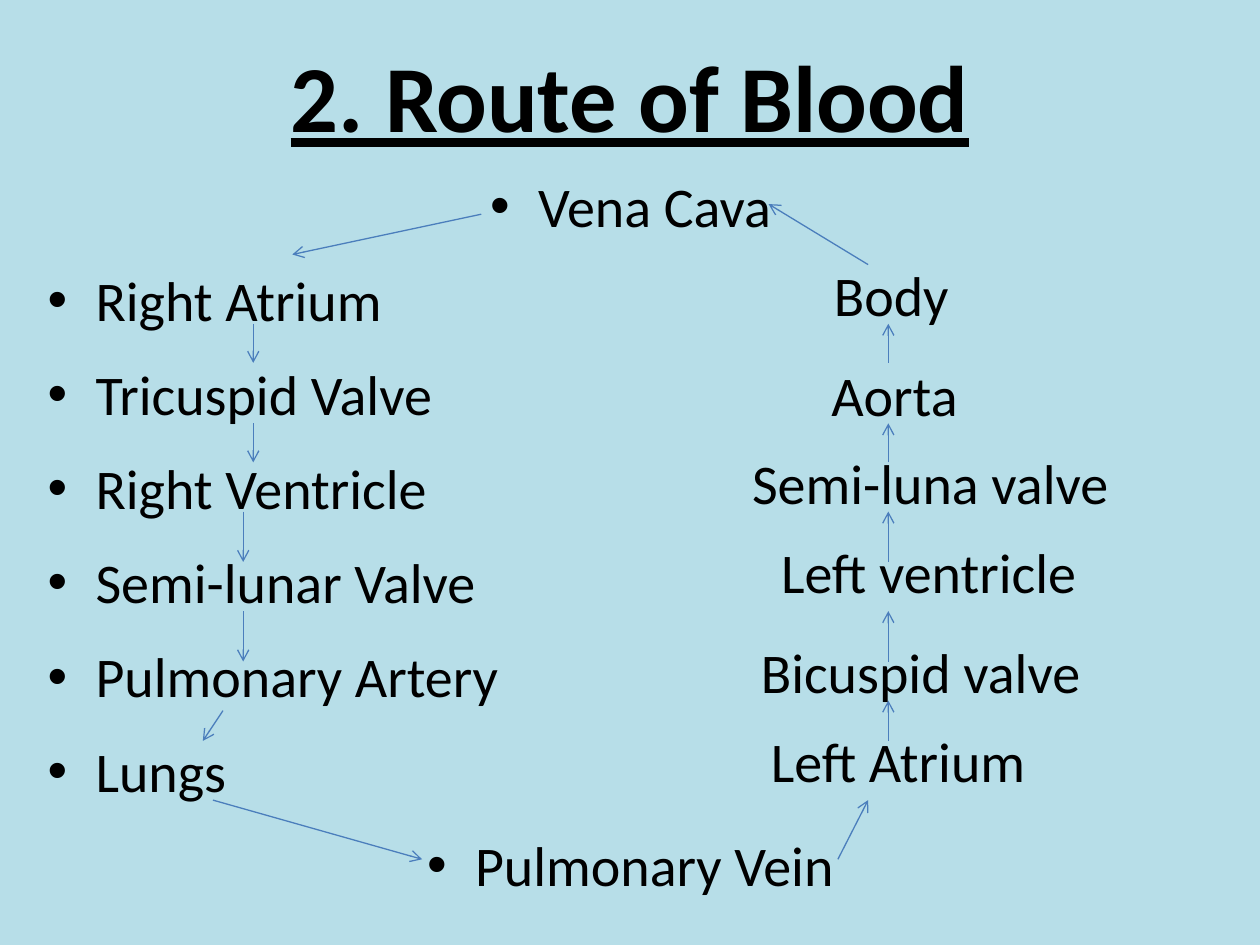
from lxml import etree
from pptx import Presentation
from pptx.dml.color import RGBColor
from pptx.enum.shapes import MSO_CONNECTOR
from pptx.enum.text import MSO_ANCHOR, PP_ALIGN
from pptx.oxml.ns import qn
from pptx.util import Inches, Pt

LEFT, CENTER = PP_ALIGN.LEFT, PP_ALIGN.CENTER
TOP, MIDDLE = MSO_ANCHOR.TOP, MSO_ANCHOR.MIDDLE
STRAIGHT = MSO_CONNECTOR.STRAIGHT

BACKGROUND, INK, ARROW = "B7DEE8", "000000", "4B7EBC"
TITLE = "2. Route of Blood"
OUTWARD_ROUTE = [
    ("Vena Cava", CENTER), ("Right Atrium", LEFT), ("Tricuspid Valve", LEFT),
    ("Right Ventricle", LEFT), ("Semi-lunar Valve", LEFT),
    ("Pulmonary Artery", LEFT), ("Lungs", LEFT), ("Pulmonary Vein", CENTER),
]
RETURN_ROUTE = [
    ("Body", 6.52, 2.02, 1.33), ("Aorta", 6.5, 2.81, 1.57),
    ("Semi-luna valve", 5.87, 3.51, 3.31), ("Left ventricle", 6.1, 4.22, 3.31),
    ("Bicuspid valve", 5.94, 5.01, 3.39), ("Left Atrium", 6.02, 5.72, 2.6),
]
LABEL_HEIGHT = 0.64
DOWN_ARROWS = [(2.01, 2.57, 2.88), (2.01, 3.36, 3.67), (1.93, 4.06, 4.46), (1.93, 4.85, 5.25)]
RETURN_X = 7.05
UP_ARROWS = [(5.88, 5.56), (5.25, 4.85), (4.46, 4.06), (3.67, 3.36), (2.88, 2.57)]
SLANTED_ARROWS = [
    (3.82, 1.7, 2.32, 2.02), (1.77, 5.64, 1.61, 5.88), (1.69, 6.35, 3.35, 6.82),
    (6.65, 6.82, 6.89, 6.35), (6.89, 2.1, 6.1, 1.62),
]
TITLE_FONT = {"size": Pt(54), "bold": True, "underline": True}
BODY_FONT = {"size": Pt(32)}
BULLET_INDENT = 0.38


def color(value):
    return RGBColor.from_string(value)


def add_text(slide, box, lines, font, anchor=TOP, bulleted=False):
    shape = slide.shapes.add_textbox(*map(Inches, box))
    frame = shape.text_frame
    frame.word_wrap = True
    frame.vertical_anchor = anchor
    for index, (text, alignment) in enumerate(lines):
        paragraph = frame.add_paragraph() if index else frame.paragraphs[0]
        paragraph.alignment = alignment
        run = paragraph.add_run()
        run.text = text
        for name, value in {"name": "Calibri", **font}.items():
            setattr(run.font, name, value)
        run.font.color.rgb = color(INK)
        if bulleted:
            paragraph.space_before = Pt(15.4)
            add_bullet(paragraph)


def add_bullet(paragraph):
    properties = paragraph._p.get_or_add_pPr()
    properties.set("marL", str(Inches(BULLET_INDENT)))
    properties.set("indent", str(-Inches(BULLET_INDENT)))
    etree.SubElement(properties, qn("a:buFont")).set("typeface", "Arial")
    etree.SubElement(properties, qn("a:buChar")).set("char", "•")


def add_arrow(slide, points):
    connector = slide.shapes.add_connector(STRAIGHT, *map(Inches, points))
    connector.line.color.rgb = color(ARROW)
    connector.line.width = Pt(0.75)
    etree.SubElement(connector.line._get_or_add_ln(), qn("a:tailEnd")).set("type", "arrow")
    etree.SubElement(connector._element.spPr, qn("a:effectLst"))


def main():
    presentation = Presentation()
    presentation.slide_width, presentation.slide_height = Inches(10), Inches(7.5)
    slide = presentation.slides.add_slide(presentation.slide_layouts[6])
    slide.background.fill.solid()
    slide.background.fill.fore_color.rgb = color(BACKGROUND)

    add_text(slide, (0.5, 0.13, 9, 1.25), [(TITLE, CENTER)], TITLE_FONT, MIDDLE)
    add_text(slide, (0.28, 1.31, 9.45, 6.14), OUTWARD_ROUTE, BODY_FONT, bulleted=True)

    down = [(x, start, x, end) for x, start, end in DOWN_ARROWS]
    up = [(RETURN_X, start, RETURN_X, end) for start, end in UP_ARROWS]
    for points in down + up + SLANTED_ARROWS:
        add_arrow(slide, points)
    for text, left, top, width in RETURN_ROUTE:
        add_text(slide, (left, top, width, LABEL_HEIGHT), [(text, LEFT)], BODY_FONT)

    presentation.save("out.pptx")


if __name__ == "__main__":
    main()
